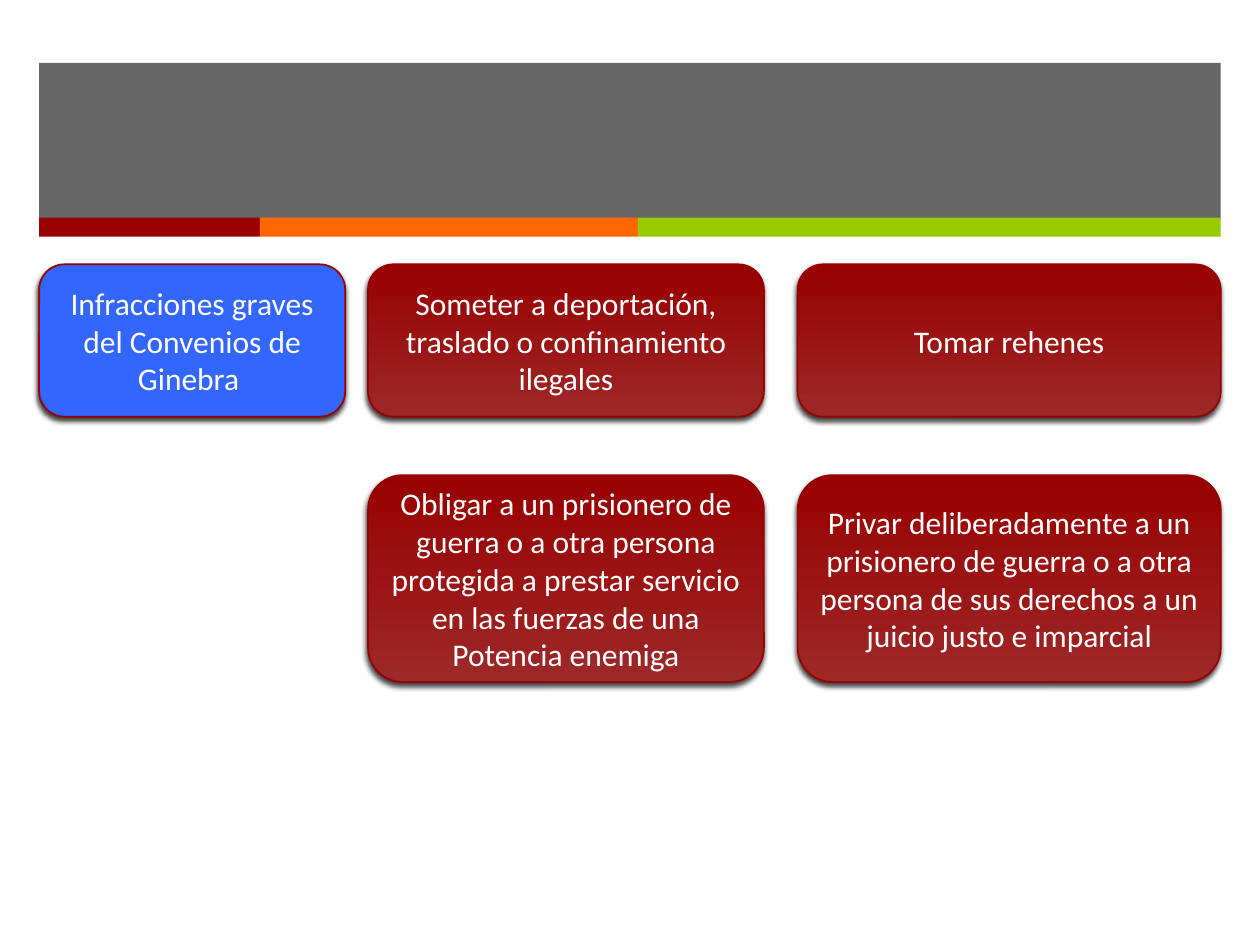
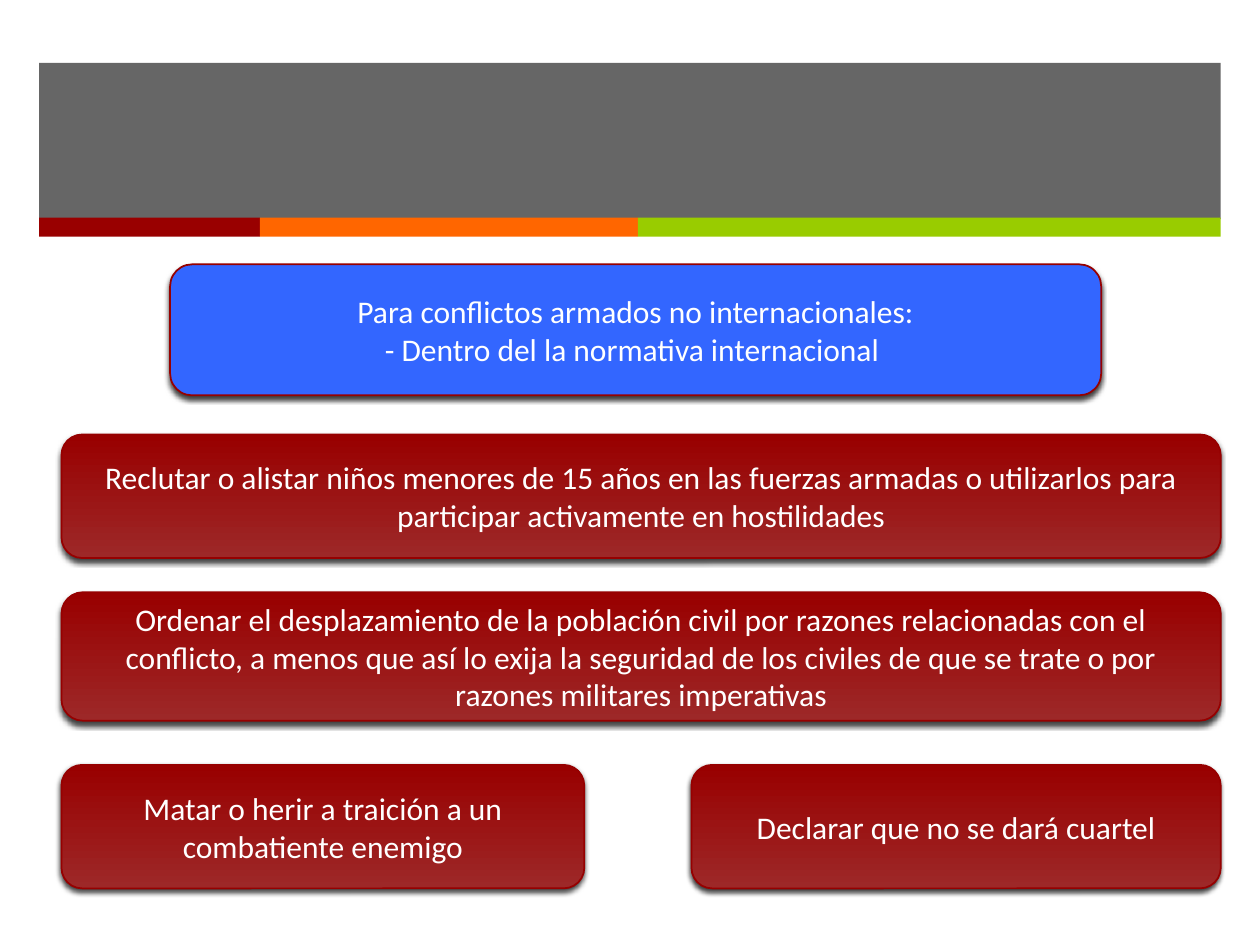
from dataclasses import dataclass

from lxml.etree import SubElement
from pptx import Presentation
from pptx.dml.color import RGBColor
from pptx.enum.shapes import MSO_SHAPE
from pptx.enum.text import MSO_ANCHOR, PP_ALIGN
from pptx.oxml.ns import qn
from pptx.shapes.autoshape import Shape
from pptx.slide import Slide
from pptx.util import Cm, Pt


@dataclass(frozen=True)
class Theme:
    font: str = "Calibri"
    text_size: Pt = Pt(18)
    text: RGBColor = RGBColor(0xFF, 0xFF, 0xFF)
    header: RGBColor = RGBColor(0x26, 0x26, 0x26)
    header_opacity: int = 70
    heading: RGBColor = RGBColor(0x33, 0x66, 0xFF)
    crime_top: RGBColor = RGBColor(0x99, 0x00, 0x00)
    crime_bottom: RGBColor = RGBColor(0x9D, 0x28, 0x28)
    outline: RGBColor = RGBColor(0x96, 0x00, 0x00)
    outline_width: Pt = Pt(1)
    shadow: RGBColor = RGBColor(0x00, 0x00, 0x00)
    shadow_opacity: int = 75
    orange: RGBColor = RGBColor(0xFF, 0x66, 0x00)
    green: RGBColor = RGBColor(0x99, 0xCC, 0x00)


@dataclass(frozen=True)
class Span:
    """Start and length along one axis, in centimetres."""
    start: float
    length: float


@dataclass(frozen=True)
class Card:
    column: Span
    row: Span
    text: str
    is_heading: bool = False


THEME = Theme()

PAGE = Span(0.79, 23.82)
HEADER_ROW = Span(1.27, 3.15)
STRIPE_ROW = Span(4.39, 0.38)
STRIPES = ((4.45, THEME.crime_top), (7.62, THEME.orange), (11.75, THEME.green))

CARD_TOP = 5.33

# Grave breaches: a heading column and a grid of two columns
BREACH_HEADING = Span(PAGE.start, 6.17)
BREACH_LEFT = Span(7.42, 7.98)
BREACH_RIGHT = Span(16.08, 8.53)
BREACH_FIRST = Span(CARD_TOP, 3.07)
BREACH_SECOND = Span(9.58, 4.17)

BREACH_CARDS = (
    Card(BREACH_HEADING, BREACH_FIRST,
         "Infracciones graves del Convenios de Ginebra ", is_heading=True),
    Card(BREACH_LEFT, BREACH_FIRST,
         "Someter a deportación, traslado o confinamiento ilegales"),
    Card(BREACH_RIGHT, BREACH_FIRST, "Tomar rehenes"),
    Card(BREACH_LEFT, BREACH_SECOND,
         "Obligar a un prisionero de guerra o a otra persona protegida a "
         "prestar servicio en las fuerzas de una Potencia enemiga"),
    Card(BREACH_RIGHT, BREACH_SECOND,
         "Privar deliberadamente a un prisionero de guerra o a otra persona "
         "de sus derechos a un juicio justo e imparcial"),
)

# Internal conflicts: full-width rows, then two halves
CONFLICT_WIDE = Span(1.24, 23.37)
CONFLICT_LEFT = Span(CONFLICT_WIDE.start, 10.54)
CONFLICT_RIGHT = Span(13.94, 10.67)
CONFLICT_LAST = Span(15.42, 2.49)

CONFLICT_CARDS = (
    Card(Span(3.43, 18.77), Span(CARD_TOP, 2.64),
         "Para conflictos armados no internacionales:\n"
         "- Dentro del la normativa internacional ", is_heading=True),
    Card(CONFLICT_WIDE, Span(8.76, 2.49),
         "Reclutar o alistar niños menores de 15 años en las fuerzas armadas "
         "o utilizarlos para participar activamente en hostilidades"),
    Card(CONFLICT_WIDE, Span(11.94, 2.59),
         "Ordenar el desplazamiento de la población civil por razones "
         "relacionadas con el conflicto, a menos que así lo exija la "
         "seguridad de los civiles de que se trate o por razones militares "
         "imperativas"),
    Card(CONFLICT_LEFT, CONFLICT_LAST,
         "Matar o herir a traición a un combatiente enemigo"),
    Card(CONFLICT_RIGHT, CONFLICT_LAST, "Declarar que no se dará cuartel"),
)


def add_box(slide: Slide, kind: MSO_SHAPE, column: Span, row: Span) -> Shape:
    shape = slide.shapes.add_shape(
        kind, Cm(column.start), Cm(row.start), Cm(column.length), Cm(row.length))
    shape.shadow.inherit = False
    return shape


def add_band(slide: Slide, column: Span, row: Span, color: RGBColor) -> Shape:
    band = add_box(slide, MSO_SHAPE.RECTANGLE, column, row)
    band.fill.solid()
    band.fill.fore_color.rgb = color
    band.line.fill.background()
    return band


def add_alpha(color_element, percent: int) -> None:
    SubElement(color_element, qn("a:alpha"), val=str(percent * 1000))


def add_header(slide: Slide) -> None:
    """Draw the translucent grey band and the coloured stripes below it."""
    header = add_band(slide, PAGE, HEADER_ROW, THEME.header)
    header_color = header._element.spPr.find(qn("a:solidFill")).find(qn("a:srgbClr"))
    add_alpha(header_color, THEME.header_opacity)
    left = PAGE.start
    for width, color in STRIPES:
        add_band(slide, Span(left, width), STRIPE_ROW, color)
        left += width


def add_shadow(shape: Shape) -> None:
    effects = shape._element.spPr.find(qn("a:effectLst"))
    shadow = SubElement(effects, qn("a:outerShdw"), blurRad=str(Pt(3)),
                        dist=str(Pt(2)), dir=str(110 * 60000), rotWithShape="0")
    color = SubElement(shadow, qn("a:srgbClr"), val=str(THEME.shadow))
    add_alpha(color, THEME.shadow_opacity)


def fill_card(shape: Shape, is_heading: bool) -> None:
    if is_heading:
        shape.fill.solid()
        shape.fill.fore_color.rgb = THEME.heading
        return
    shape.fill.gradient()
    shape.fill.gradient_angle = 90
    for stop, color in zip(shape.fill.gradient_stops,
                           (THEME.crime_bottom, THEME.crime_top)):
        stop.color.rgb = color


def add_card(slide: Slide, card: Card) -> None:
    shape = add_box(slide, MSO_SHAPE.ROUNDED_RECTANGLE, card.column, card.row)
    fill_card(shape, card.is_heading)
    shape.line.color.rgb = THEME.outline
    shape.line.width = THEME.outline_width
    add_shadow(shape)
    text_frame = shape.text_frame
    text_frame.word_wrap = True
    text_frame.vertical_anchor = MSO_ANCHOR.MIDDLE
    text_frame.text = card.text
    for paragraph in text_frame.paragraphs:
        paragraph.alignment = PP_ALIGN.CENTER
        paragraph.font.name = THEME.font
        paragraph.font.size = THEME.text_size
        paragraph.font.color.rgb = THEME.text


def main() -> None:
    presentation = Presentation()
    presentation.slide_width = Cm(25.4)
    presentation.slide_height = Cm(19.05)
    blank_layout = presentation.slide_layouts.get_by_name("Blank")
    for cards in (BREACH_CARDS, CONFLICT_CARDS):
        slide = presentation.slides.add_slide(blank_layout)
        add_header(slide)
        for card in cards:
            add_card(slide, card)
    presentation.save("out.pptx")


if __name__ == "__main__":
    main()
